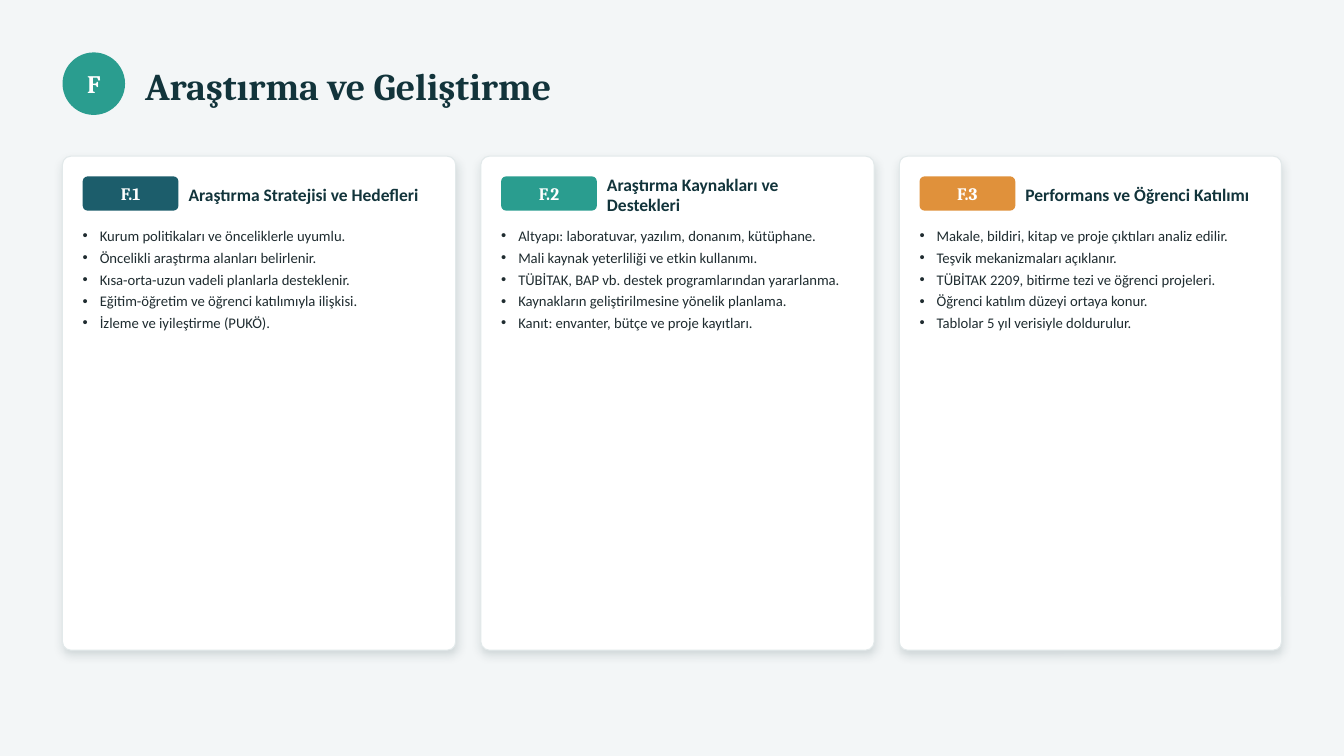
from lxml.etree import SubElement
from pptx import Presentation
from pptx.dml.color import RGBColor
from pptx.enum.shapes import MSO_SHAPE
from pptx.enum.text import MSO_ANCHOR, MSO_AUTO_SIZE, PP_ALIGN
from pptx.oxml import parse_xml
from pptx.oxml.ns import nsdecls, qn
from pptx.util import Inches, Pt

BACKGROUND = RGBColor(0xF3, 0xF6, 0xF7)
INK = RGBColor(0x12, 0x34, 0x3B)
BODY = RGBColor(0x1F, 0x2C, 0x30)
WHITE = RGBColor(0xFF, 0xFF, 0xFF)
BORDER = RGBColor(0xE2, 0xE9, 0xEA)
PETROL = RGBColor(0x1C, 0x5D, 0x6B)
TEAL = RGBColor(0x2A, 0x9D, 0x8F)
ORANGE = RGBColor(0xE0, 0x91, 0x3B)

# Grid, in inches
WIDTH, HEIGHT = 13.33, 7.5
MARGIN, GAP, PAD = 0.62, 0.25, 0.2
CARD_WIDTH, CARD_TOP, CARD_HEIGHT = 3.9, 1.55, 4.9
BADGE_WIDTH, BADGE_HEIGHT = 0.95, 0.34
INDENT = Inches(0.17)

# Text formats
LETTER = dict(name="Cambria", size=Pt(18), bold=True, color=WHITE)
TITLE = dict(name="Cambria", size=Pt(27), bold=True, color=INK)
BADGE = dict(name="Cambria", size=Pt(12.5), bold=True, color=WHITE)
HEADING = dict(name="Calibri", size=Pt(12.5), bold=True, color=INK)
BULLET = dict(name="Calibri", size=Pt(10.5), bold=False, color=BODY)

# Badge colour, heading, placeholder index and list of each card
CARDS = [
    (PETROL, "Araştırma Stratejisi ve Hedefleri", 1, [
        "Kurum politikaları ve önceliklerle uyumlu.",
        "Öncelikli araştırma alanları belirlenir.",
        "Kısa-orta-uzun vadeli planlarla desteklenir.",
        "Eğitim-öğretim ve öğrenci katılımıyla ilişkisi.",
        "İzleme ve iyileştirme (PUKÖ)."]),
    (TEAL, "Araştırma Kaynakları ve Destekleri", 2, [
        "Altyapı: laboratuvar, yazılım, donanım, kütüphane.",
        "Mali kaynak yeterliliği ve etkin kullanımı.",
        "TÜBİTAK, BAP vb. destek programlarından yararlanma.",
        "Kaynakların geliştirilmesine yönelik planlama.",
        "Kanıt: envanter, bütçe ve proje kayıtları."]),
    (ORANGE, "Performans ve Öğrenci Katılımı", 4, [
        "Makale, bildiri, kitap ve proje çıktıları analiz edilir.",
        "Teşvik mekanizmaları açıklanır.",
        "TÜBİTAK 2209, bitirme tezi ve öğrenci projeleri.",
        "Öğrenci katılım düzeyi ortaya konur.",
        "Tablolar 5 yıl verisiyle doldurulur."]),
]


def write(box, lines, style, align=PP_ALIGN.LEFT, anchor=MSO_ANCHOR.MIDDLE):
    """Fill a box with one formatted paragraph per line."""
    frame = box.text_frame
    settings = dict(word_wrap=True, auto_size=MSO_AUTO_SIZE.NONE,
                    vertical_anchor=anchor, margin_left=0, margin_top=0,
                    margin_right=0, margin_bottom=0)
    for key, value in settings.items():
        setattr(frame, key, value)
    for number, line in enumerate(lines):
        para = frame.add_paragraph() if number else frame.paragraphs[0]
        para.alignment = align
        span = para.add_run()
        span.text = line
        for key, value in style.items():
            if key == "color":
                span.font.color.rgb = value
            else:
                setattr(span.font, key, value)


def add_block(kind, left, top, width, height, fill):
    """Add a flat filled shape without outline or shadow."""
    block = page.shapes.add_shape(
        kind, Inches(left), Inches(top), Inches(width), Inches(height))
    block.shadow.inherit = False
    block.fill.solid()
    block.fill.fore_color.rgb = fill
    block.line.fill.background()
    return block


deck = Presentation()
deck.slide_width, deck.slide_height = Inches(WIDTH), Inches(HEIGHT)
page = deck.slides.add_slide(deck.slide_layouts.get_by_name("Comparison"))
page.background.fill.solid()
page.background.fill.fore_color.rgb = BACKGROUND
holders = {holder.placeholder_format.idx: holder for holder in page.placeholders}

# Header: letter circle and title
circle = add_block(MSO_SHAPE.OVAL, MARGIN, 0.52, 0.62, 0.62, TEAL)
write(circle, ["F"], LETTER, PP_ALIGN.CENTER)
title = page.shapes.title
title.left, title.top = Inches(1.44), Inches(0.5)
title.width, title.height = Inches(WIDTH - MARGIN - 1.44), Inches(0.7)
write(title, ["Araştırma ve Geliştirme"], TITLE)

for column, (color, heading, index, items) in enumerate(CARDS):
    left = MARGIN + column * (CARD_WIDTH + GAP)
    width = min(CARD_WIDTH, WIDTH - MARGIN - left)
    inner = left + PAD

    # Card with a soft shadow
    card = add_block(MSO_SHAPE.ROUNDED_RECTANGLE, left, CARD_TOP, width,
                     CARD_HEIGHT, WHITE)
    card.adjustments[0] = 0.021
    card.line.color.rgb = BORDER
    card.line.width = Pt(0.75)
    card.element.spPr.find(qn("a:effectLst")).append(parse_xml(
        f'<a:outerShdw {nsdecls("a")} blurRad="{Pt(7)}" dist="{Pt(3)}" '
        'dir="5400000" algn="ctr" rotWithShape="0"><a:srgbClr val="0C2A30">'
        '<a:alpha val="14000"/></a:srgbClr></a:outerShdw>'))

    # Badge and heading
    badge = add_block(MSO_SHAPE.ROUNDED_RECTANGLE, inner, CARD_TOP + PAD,
                      BADGE_WIDTH, BADGE_HEIGHT, color)
    badge.adjustments[0] = 0.147
    write(badge, [f"F.{column + 1}"], BADGE, PP_ALIGN.CENTER)
    offset = BADGE_WIDTH + 0.1
    label = page.shapes.add_textbox(
        Inches(inner + offset), Inches(1.73),
        Inches(width - 2 * PAD - offset), Inches(0.4))
    write(label, [heading], HEADING)

    # Bullet list, brought in front of its card
    body = holders[index]
    body.left, body.top = Inches(inner), Inches(2.25)
    body.width, body.height = Inches(width - 2 * PAD), Inches(4)
    write(body, items, BULLET, anchor=MSO_ANCHOR.TOP)
    for para in body.text_frame.paragraphs:
        props = para._p.get_or_add_pPr()
        props.set("marL", str(INDENT))
        props.set("indent", str(-INDENT))
        SubElement(props, qn("a:buFont"), typeface="Arial")
        SubElement(props, qn("a:buChar"), char="•")
        para.space_before, para.space_after = Pt(0), Pt(3)
    card.element.getparent().append(body.element)

# Drop every placeholder left without text
for holder in holders.values():
    if not holder.text_frame.text:
        holder.element.getparent().remove(holder.element)

deck.save("out.pptx")
